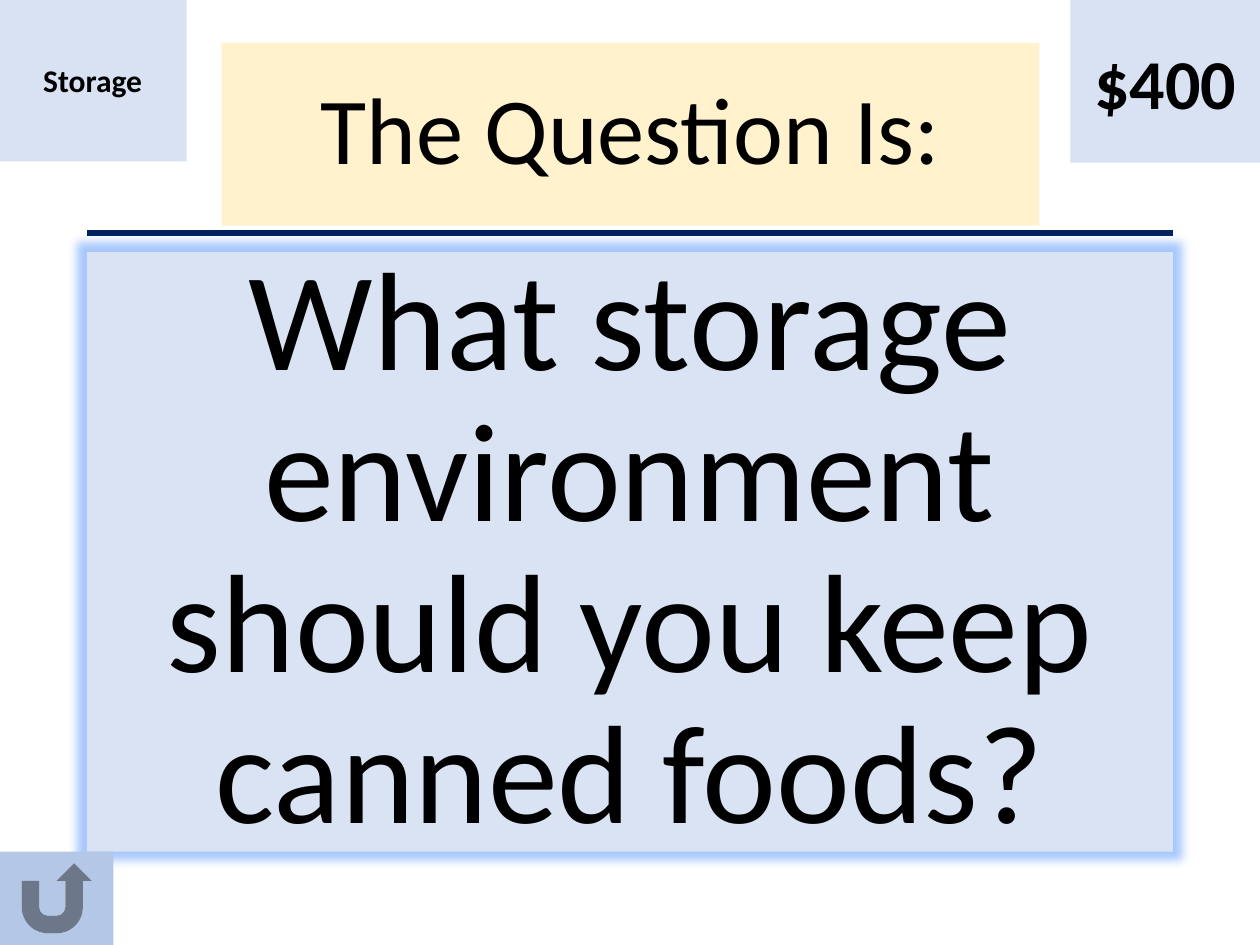
from pptx import Presentation
from pptx.dml.color import RGBColor
from pptx.enum.shapes import MSO_CONNECTOR, MSO_SHAPE
from pptx.enum.text import MSO_ANCHOR, MSO_AUTO_SIZE, PP_ALIGN
from pptx.oxml import parse_xml
from pptx.oxml.ns import nsdecls, qn
from pptx.util import Pt
from lxml.etree import SubElement


def paint(fmt, color):
    fmt.solid()
    fmt.fore_color.rgb = RGBColor.from_string(color)


def write(shape, text, size, bold=False, space=None):
    frame = shape.text_frame
    frame.word_wrap = True
    frame.auto_size = MSO_AUTO_SIZE.NONE
    frame.vertical_anchor = MSO_ANCHOR.MIDDLE
    para = frame.paragraphs[0]
    para.alignment = PP_ALIGN.CENTER
    para.line_spacing = space
    para.space_before = Pt(0)
    run = para.add_run()
    run.text = text
    run.font.name = "Calibri"
    run.font.size = Pt(size)
    run.font.bold = bold
    paint(run.font.fill, "000000")


deck = Presentation()
deck.slide_width, deck.slide_height = Pt(720), Pt(540)
slide = deck.slides.add_slide(deck.slide_layouts[1])
shapes = slide.shapes

rule = shapes.add_connector(MSO_CONNECTOR.STRAIGHT, Pt(49.7), Pt(133.2), Pt(670.3), Pt(133.2))
rule.line.width = Pt(3)
paint(rule.line.fill, "002060")
SubElement(rule._element.spPr, qn("a:effectLst"))
shapes._spTree.insert(2, rule._element)

title, body = shapes.title, slide.placeholders[1]
for shape, box, color, text, size in [
    (title, (126.7, 24.5, 467.3, 104.4), "FFF2CC", "The Question Is:", 54),
    (body, (49.7, 144, 620.6, 342.7), "DAE3F3",
     "What storage environment should you keep canned foods?", 80),
]:
    shape.left, shape.top, shape.width, shape.height = map(Pt, box)
    paint(shape.fill, color)
    write(shape, text, size, space=0.9)

props = body.text_frame.paragraphs[0]._p.get_or_add_pPr()
props.set("marL", "0")
props.set("indent", "0")
SubElement(props, qn("a:buNone"))
body._element.spPr.append(parse_xml(
    f'<a:effectLst {nsdecls("a")}><a:glow rad="139700"><a:srgbClr val="4F90FA">'
    '<a:alpha val="50000"/></a:srgbClr></a:glow></a:effectLst>'))

for kind, box, text, size in [
    (MSO_SHAPE.ACTION_BUTTON_RETURN, (0, 486.7, 64.8, 53.3), "", 0),
    (MSO_SHAPE.ACTION_BUTTON_CUSTOM, (-0.7, -0.7, 107.3, 92.9), "Storage", 18),
    (MSO_SHAPE.ACTION_BUTTON_CUSTOM, (611.6, 0, 108.4, 92.9), "$400", 40),
]:
    tile = shapes.add_shape(kind, *map(Pt, box))
    tile.shadow.inherit = False
    tile.line.fill.background()
    paint(tile.fill, "B4C7E7")
    if text:
        tint = tile._element.spPr.find(qn("a:solidFill"))[0]
        SubElement(tint, qn("a:alpha")).set("val", "50000")
        write(tile, text, size, bold=True)

deck.save("out.pptx")
